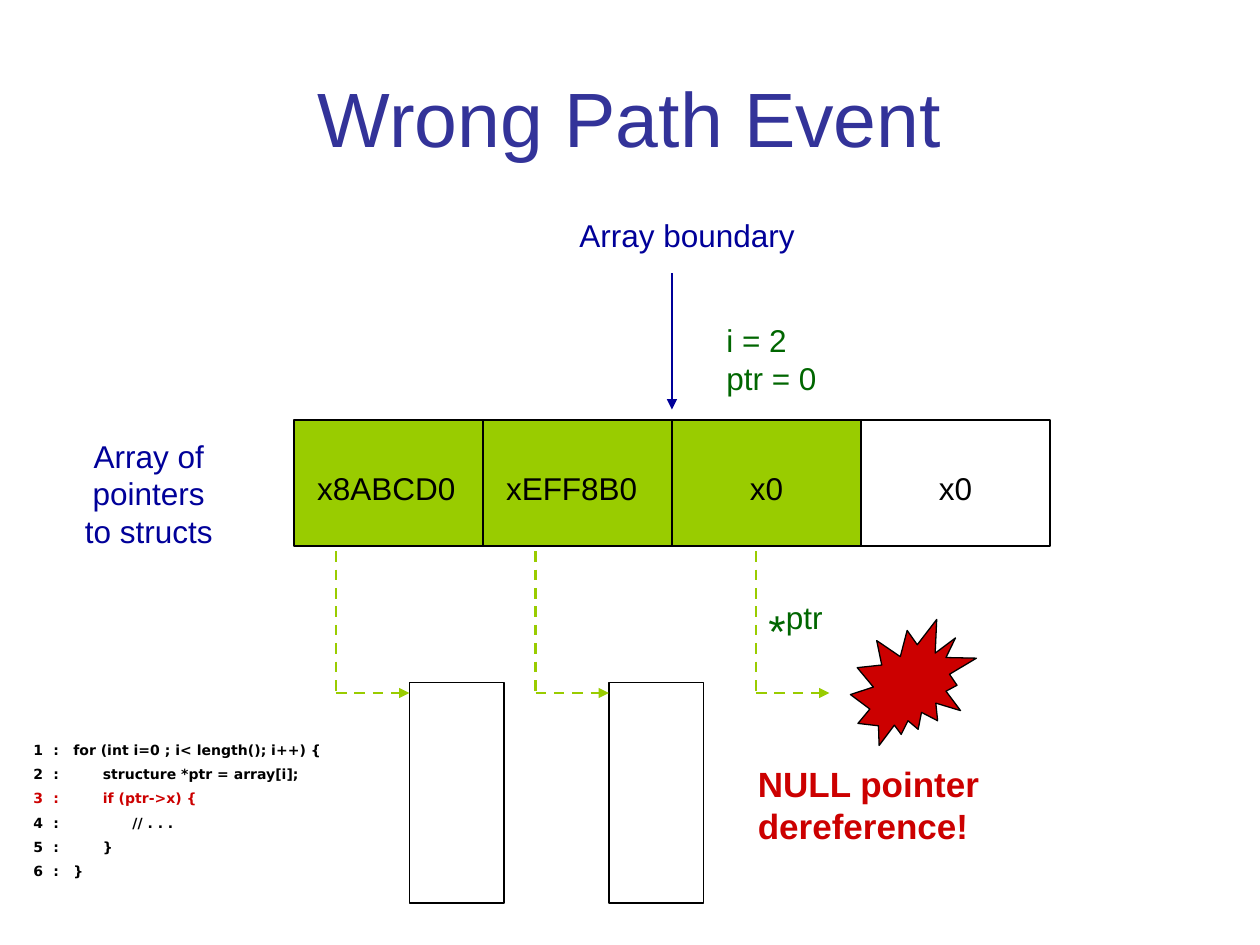
"""Build the slide on a wrong path event caused by a NULL pointer dereference."""
from lxml import etree
from pptx import Presentation
from pptx.dml.color import RGBColor
from pptx.enum.dml import MSO_LINE
from pptx.enum.shapes import MSO_CONNECTOR, MSO_SHAPE
from pptx.enum.text import MSO_ANCHOR, PP_ALIGN
from pptx.oxml.ns import qn
from pptx.util import Pt

RECT, SEAL = MSO_SHAPE.RECTANGLE, MSO_SHAPE.EXPLOSION2
STRAIGHT, DASH = MSO_CONNECTOR.STRAIGHT, MSO_LINE.DASH
LEFT, CENTER = PP_ALIGN.LEFT, PP_ALIGN.CENTER
TOP, MIDDLE = MSO_ANCHOR.TOP, MSO_ANCHOR.MIDDLE

BLACK = RGBColor(0x00, 0x00, 0x00)
WHITE = RGBColor(0xFF, 0xFF, 0xFF)
INDIGO = RGBColor(0x33, 0x33, 0x99)
NAVY = RGBColor(0x00, 0x00, 0x99)
LIME = RGBColor(0x99, 0xCC, 0x00)
GREEN = RGBColor(0x00, 0x66, 0x00)
RED = RGBColor(0xCC, 0x00, 0x00)

CELLS = [
    ("x8ABCD0", LEFT, LIME),
    ("xEFF8B0", LEFT, LIME),
    ("x0", CENTER, LIME),
    ("x0", CENTER, WHITE),
]
ARRAY_X, ARRAY_Y, CELL_W, CELL_H = 168, 240, 108, 72
POINTERS = [(192, True), (306, True), (432, False)]
POINTER_TOP, POINTER_END, POINTER_W = 294, 396, 42
STRUCT_Y, STRUCT_W, STRUCT_H = 390, 54, 126

LABELS = [
    (["Wrong Path Event"], (36, 21.6, 648, 90), 44, INDIGO, CENTER, False, MIDDLE),
    (["Array boundary"], (324, 120, 137.5, 29), 18, NAVY, LEFT, False, TOP),
    (["Array of pointers", "to structs"], (12, 246, 146, 50.5), 18, NAVY, CENTER, False, TOP),
    (["i = 2", "ptr = 0"], (408, 180, 79, 50.5), 18, GREEN, LEFT, False, TOP),
    (["NULL pointer dereference!"], (426, 432, 266.5, 31), 20, RED, LEFT, True, TOP),
]
CODE = [
    (0, "for (int i=0 ; i< length(); i++) {", BLACK),
    (1, "structure *ptr = array[i];", BLACK),
    (1, "if (ptr->x) {", RED),
    (2, "// . . .", BLACK),
    (1, "}", BLACK),
    (0, "}", BLACK),
]
CODE_TABS = [11.4, 22.8, 39.7, 56.6]


def add_run(p, text, size, color, bold=False, font="Arial"):
    r = p.add_run()
    r.text = text
    r.font.size, r.font.name, r.font.bold = Pt(size), font, bold
    r.font.color.rgb = color
    return r


def add_box(slide, box, wrap=False, anchor=TOP):
    tf = slide.shapes.add_textbox(*map(Pt, box)).text_frame
    tf.word_wrap, tf.vertical_anchor = wrap, anchor
    return tf


def add_label(slide, lines, box, size, color, align, bold, anchor):
    tf = add_box(slide, box, anchor=anchor)
    for i, line in enumerate(lines):
        p = tf.add_paragraph() if i else tf.paragraphs[0]
        p.alignment = align
        add_run(p, line, size, color, bold)


def add_figure(slide, kind, box, fill, width):
    sp = slide.shapes.add_shape(kind, *map(Pt, box))
    sp.shadow.inherit = False
    if fill is None:
        sp.fill.background()
    else:
        sp.fill.solid()
        sp.fill.fore_color.rgb = fill
    sp.line.color.rgb, sp.line.width = BLACK, Pt(width)
    return sp


def add_line(slide, start, end, color, dash=None, arrow=False):
    line = slide.shapes.add_connector(STRAIGHT, *map(Pt, start + end))
    line.line.color.rgb, line.line.width = color, Pt(1.5)
    if dash:
        line.line.dash_style = dash
    if arrow:
        etree.SubElement(line.line._get_or_add_ln(), qn("a:tailEnd"), type="triangle")
    etree.SubElement(line._element.spPr, qn("a:effectLst"))


def add_cell(slide, index, text, align, fill):
    box = (ARRAY_X + index * CELL_W, ARRAY_Y, CELL_W, CELL_H)
    tf = add_figure(slide, RECT, box, fill, 1.5).text_frame
    tf.margin_left = tf.margin_right = Pt(13.2)
    tf.margin_top, tf.margin_bottom = Pt(6), Pt(0)
    tf.vertical_anchor = MIDDLE
    tf.paragraphs[0].alignment = align
    add_run(tf.paragraphs[0], text, 18, BLACK)


def add_pointer(slide, x, has_struct):
    corner, end = (x, POINTER_END), (x + POINTER_W, POINTER_END)
    if has_struct:
        add_figure(slide, RECT, (end[0], STRUCT_Y, STRUCT_W, STRUCT_H), None, 0.75)
    add_line(slide, (x, POINTER_TOP), corner, LIME, DASH)
    add_line(slide, corner, end, LIME, DASH, arrow=True)


def add_code(slide):
    tf = add_box(slide, (12, 420, 192, 100), wrap=True)
    for i, (level, text, color) in enumerate(CODE):
        p = tf.add_paragraph() if i else tf.paragraphs[0]
        p.space_before = Pt(4.3 if i else 0)
        tabs = etree.SubElement(p._p.get_or_add_pPr(), qn("a:tabLst"))
        for stop in (CODE_TABS[0], CODE_TABS[1 + level]):
            etree.SubElement(tabs, qn("a:tab"), pos=str(int(Pt(stop))), algn="l")
        add_run(p, f"{i + 1}\t:\t{text}", 8, color, True, "DejaVu Sans")


def main():
    prs = Presentation()
    prs.slide_width, prs.slide_height = Pt(720), Pt(540)
    slide = prs.slides.add_slide(prs.slide_layouts[6])
    for label in LABELS:
        add_label(slide, *label)
    for i, cell in enumerate(CELLS):
        add_cell(slide, i, *cell)
    boundary_x = ARRAY_X + 2 * CELL_W
    add_line(slide, (boundary_x, 156), (boundary_x, 234), NAVY, arrow=True)
    for pointer in POINTERS:
        add_pointer(slide, *pointer)
    add_figure(slide, SEAL, (486, 354, 72, 72), RED, 0.75)
    p = add_box(slide, (432, 312, 47, 42)).paragraphs[0]
    star = add_run(p, "*", 44, GREEN)
    star._r.get_or_add_rPr().set("baseline", "-24000")
    add_run(p, "ptr", 18, GREEN)
    add_code(slide)
    prs.save("out.pptx")


if __name__ == "__main__":
    main()
